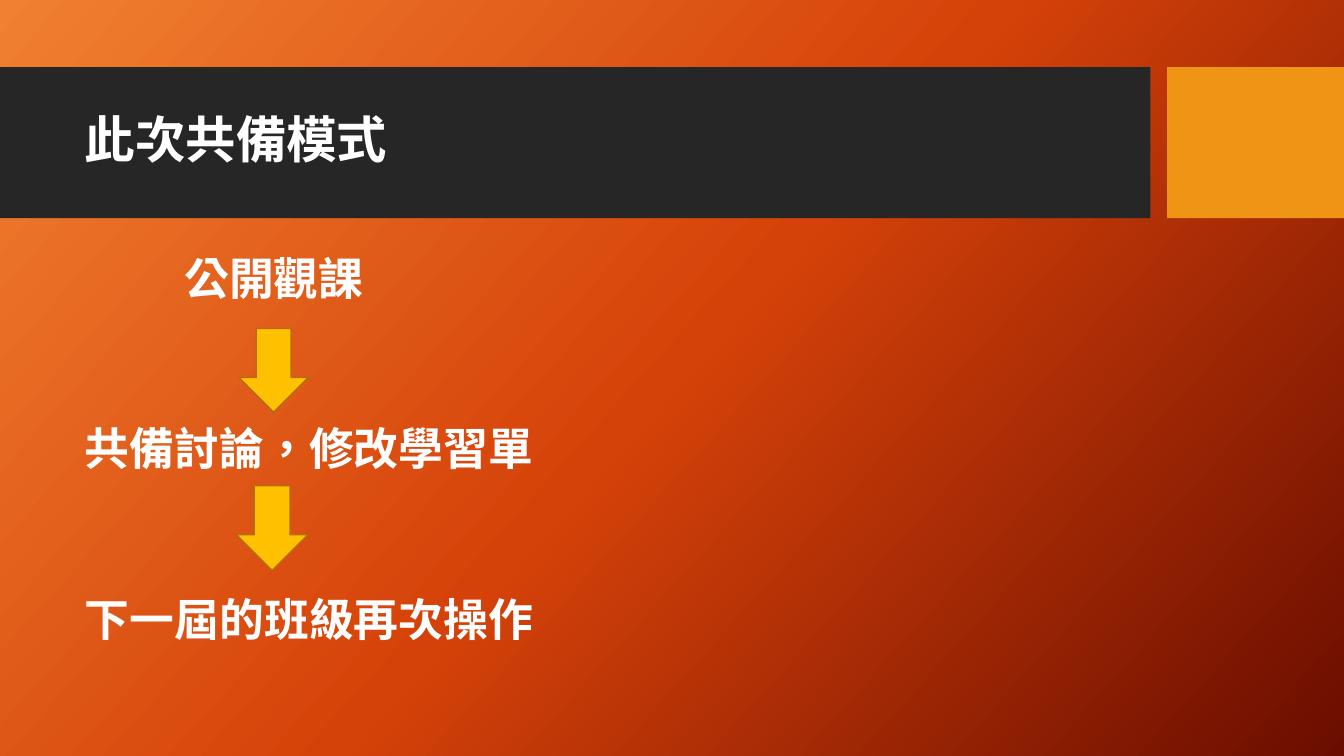
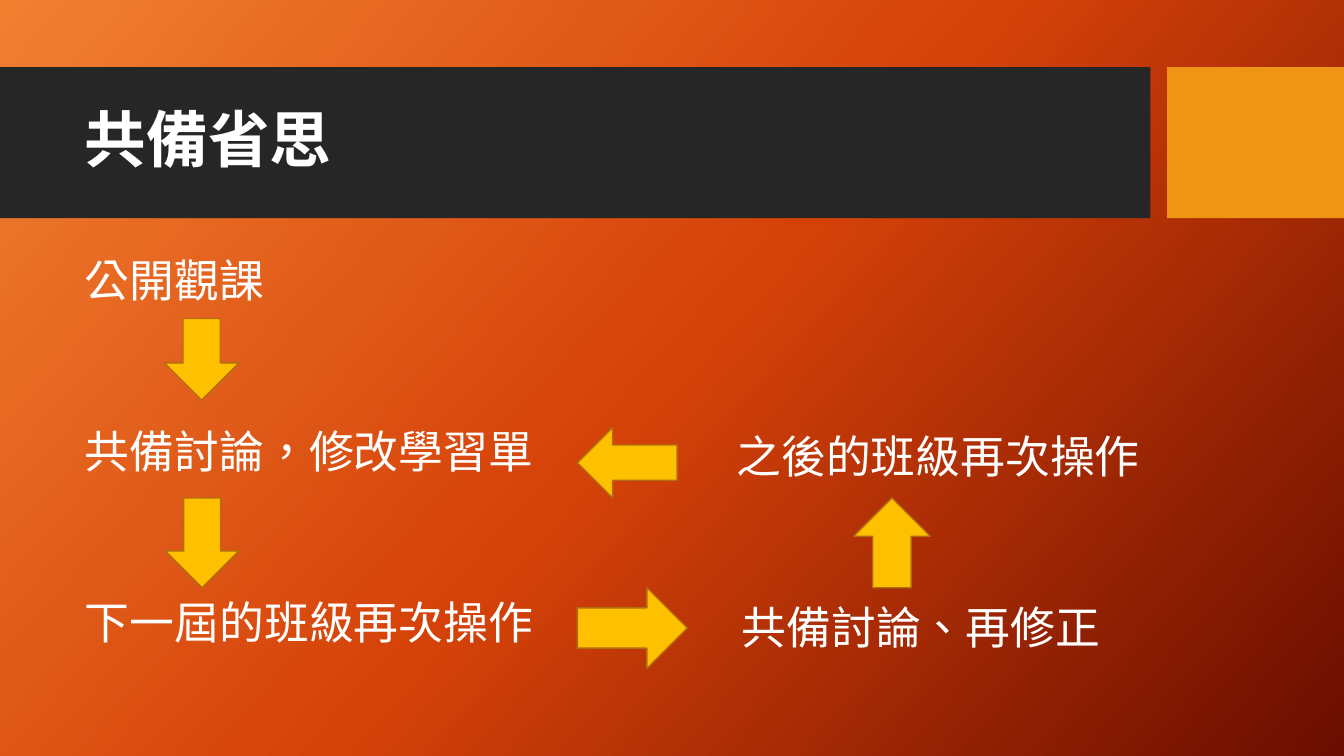
from copy import deepcopy
from dataclasses import dataclass

from pptx import Presentation
from pptx.dml.color import RGBColor
from pptx.enum.lang import MSO_LANGUAGE_ID
from pptx.enum.shapes import MSO_SHAPE
from pptx.enum.text import MSO_ANCHOR
from pptx.oxml.ns import qn
from pptx.util import Pt

RECTANGLE = MSO_SHAPE.RECTANGLE
DOWN = MSO_SHAPE.DOWN_ARROW
UP = MSO_SHAPE.UP_ARROW
LEFT = MSO_SHAPE.LEFT_ARROW
RIGHT = MSO_SHAPE.RIGHT_ARROW
MIDDLE = MSO_ANCHOR.MIDDLE
CHINESE = MSO_LANGUAGE_ID.TRADITIONAL_CHINESE


@dataclass(frozen=True)
class Theme:
    gradient: tuple = ((0, "F18031"), (0.5, "D54209"), (1, "6A0D00"))
    gradient_angle: int = 318
    band: str = "262626"
    accent: str = "F09415"
    text: str = "FFFFFF"
    arrow: str = "FFC000"
    arrow_line: str = "B26D10"
    title_font: str = "Noto Sans CJK JP"
    step_font: str = "Noto Sans CJK SC"
    step_size: int = 32


theme = Theme()
MARGIN = 53.6
INSET = 7.2
SLACK = 16
STEP_HEIGHT = 46
ROW_PITCH = 122


def add_block(page, preset, bounds, fill, line=None):
    block = page.shapes.add_shape(preset, *map(Pt, bounds))
    block.shadow.inherit = False
    block.fill.solid()
    block.fill.fore_color.rgb = RGBColor.from_string(fill)
    if line:
        block.line.color.rgb = RGBColor.from_string(line)
        block.line.width = Pt(1)
    else:
        block.line.fill.background()


def add_text(page, bounds, text, font_name, size, bold, spacing=1.0):
    box = page.shapes.add_textbox(*map(Pt, bounds))
    frame = box.text_frame
    frame.word_wrap = True
    frame.vertical_anchor = MIDDLE
    frame.margin_left = frame.margin_right = Pt(INSET)
    frame.margin_top = frame.margin_bottom = Pt(0)
    para = frame.paragraphs[0]
    para.line_spacing = spacing
    span = para.add_run()
    span.text = text
    span.font.size = Pt(size)
    span.font.bold = bold
    span.font.color.rgb = RGBColor.from_string(theme.text)
    span.font.name = font_name
    span.font.language_id = CHINESE
    latin = span.font._element.find(qn("a:latin"))
    east_asian = latin.makeelement(qn("a:ea"), {"typeface": font_name})
    latin.addnext(east_asian)


pages = [
    {
        "title": "此次共備模式",
        "title_size": 36,
        "bold": True,
        "first_row": 175,
        "steps": [
            ("公開觀課", 124.6, 0),
            ("共備討論，修改學習單", MARGIN, 1),
            ("下一屆的班級再次操作", MARGIN, 2),
        ],
        "arrows": [
            (DOWN, (170.6, 234.7, 49.7, 59.8)),
            (DOWN, (168.8, 347, 51.1, 60.5)),
        ],
    },
    {
        "title": "共備省思",
        "title_size": 44,
        "bold": False,
        "first_row": 177,
        "steps": [
            ("公開觀課", MARGIN, 0),
            ("共備討論，修改學習單", MARGIN, 1),
            ("下一屆的班級再次操作", MARGIN, 2),
            ("共備討論、再修正", 522.7, 2.03),
            ("之後的班級再次操作", 519, 1.03),
        ],
        "arrows": [
            (DOWN, (117.4, 227.5, 53.3, 58.3)),
            (DOWN, (118.1, 355.7, 52.6, 64.1)),
            (RIGHT, (412.4, 419.8, 78.5, 57.6)),
            (UP, (609.8, 355.7, 54.7, 64.1)),
            (LEFT, (412.4, 305.3, 71.3, 50.4)),
        ],
    },
]

deck = Presentation()
deck.slide_width = Pt(960)
deck.slide_height = Pt(540)
blank = deck.slide_layouts[6]

master = deck.slide_master
backdrop = master.background.fill
backdrop.gradient()
backdrop.gradient_angle = theme.gradient_angle
stop_list = next(master._element.iter(qn("a:gsLst")))
stop_list.append(deepcopy(stop_list[0]))
for stop, (position, color) in zip(backdrop.gradient_stops, theme.gradient):
    stop.position = position
    stop.color.rgb = RGBColor.from_string(color)

for content in pages:
    page = deck.slides.add_slide(blank)
    add_block(page, RECTANGLE, (0, 48, 821.8, 107.8), theme.band)
    add_block(page, RECTANGLE, (833.7, 48, 126.3, 107.8), theme.accent)
    add_text(page, (MARGIN, 59, 756.7, 85), content["title"],
             theme.title_font, content["title_size"], True, 0.9)
    for text, left, row in content["steps"]:
        top = content["first_row"] + row * ROW_PITCH
        width = len(text) * theme.step_size + 2 * INSET + SLACK
        add_text(page, (left, top, width, STEP_HEIGHT), text,
                 theme.step_font, theme.step_size, content["bold"])
    for preset, bounds in content["arrows"]:
        add_block(page, preset, bounds, theme.arrow, theme.arrow_line)

deck.save("out.pptx")
